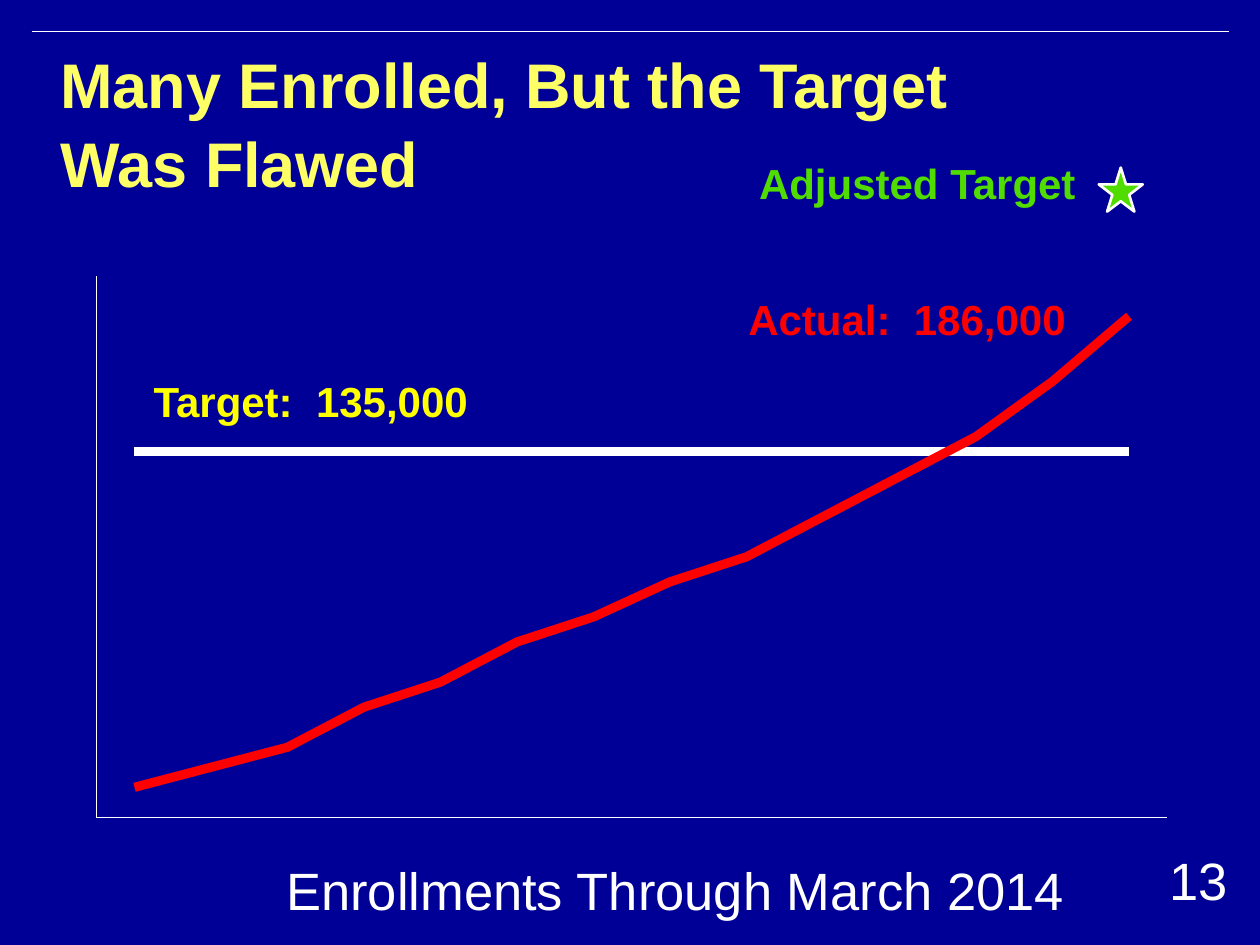
from lxml import etree
from pptx import Presentation
from pptx.chart.data import CategoryChartData
from pptx.dml.color import RGBColor
from pptx.enum.chart import XL_CHART_TYPE as ChartType, XL_MARKER_STYLE as Marker
from pptx.enum.chart import XL_TICK_LABEL_POSITION as LabelPosition, XL_TICK_MARK as TickMark
from pptx.enum.shapes import MSO_CONNECTOR as Connector, MSO_SHAPE as Shape
from pptx.enum.text import MSO_ANCHOR as Anchor, PP_ALIGN as Align
from pptx.oxml import parse_xml
from pptx.oxml.ns import nsdecls, qn
from pptx.util import Inches, Pt

COLORS = {
    "background": "000096",
    "title": "FEFF65",
    "white": "FFFFFF",
    "target": "FFFF00",
    "actual": "FF0000",
    "adjusted": "51DC00",
}
FONT = "Arial"
COLUMNS, ROWS = 100, 75
TARGET = [73] * 14
ACTUAL = [6, 10, 14, 22, 27, 35, 40, 47, 52, 60, 68, 76, 87, 100]
PLOT_AREA = {"x": 0.022, "y": 0.033, "w": 0.965, "h": 0.934}


def color(name):
    return RGBColor.from_string(COLORS[name])


class SlideBuilder:
    """Holds the style and the current slide; lengths are grid columns and rows."""

    def __init__(self, presentation):
        self.column = presentation.slide_width / COLUMNS
        self.row = presentation.slide_height / ROWS
        self.slide = presentation.slides.add_slide(presentation.slide_layouts[5])
        fill = self.slide.background.fill
        fill.solid()
        fill.fore_color.rgb = color("background")

    def box(self, left, top, width, height):
        return (round(left * self.column), round(top * self.row),
                round(width * self.column), round(height * self.row))

    def style_line(self, line, name, width):
        line.color.rgb = color(name)
        line.width = Pt(width)

    def add_run(self, paragraph, text, size, name, bold):
        run = paragraph.add_run()
        run.text = text
        font = run.font
        font.name, font.size, font.bold = FONT, Pt(size), bold
        font.color.rgb = color(name)
        return run

    def title(self, text, place):
        shape = self.slide.shapes.title
        shape.left, shape.top, shape.width, shape.height = self.box(*place)
        frame = shape.text_frame
        frame.vertical_anchor = Anchor.MIDDLE
        frame.margin_left = 0
        paragraph = frame.paragraphs[0]
        paragraph.alignment = Align.LEFT
        paragraph.line_spacing = 1.05
        run = self.add_run(paragraph, text, 36, "title", True)
        shadow = parse_xml(
            f'<a:effectLst {nsdecls("a")}><a:outerShdw dist="53882" dir="2700000">'
            '<a:srgbClr val="000000"><a:alpha val="60000"/></a:srgbClr>'
            '</a:outerShdw></a:effectLst>')
        run.font.fill._xPr.find(qn("a:solidFill")).addnext(shadow)

    def label(self, text, place, name, size=24, bold=True, align=Align.LEFT):
        frame = self.slide.shapes.add_textbox(*self.box(*place)).text_frame
        frame.word_wrap = True
        paragraph = frame.paragraphs[0]
        paragraph.alignment = align
        self.add_run(paragraph, text, size, name, bold)

    def rule(self, left, right, row):
        start, y, width, _ = self.box(left, row, right - left, 0)
        line = self.slide.shapes.add_connector(Connector.STRAIGHT, start, y, start + width, y)
        self.style_line(line.line, "white", 1)
        etree.SubElement(line._element.spPr, qn("a:effectLst"))

    def star(self, place, name):
        shape = self.slide.shapes.add_shape(Shape.STAR_5_POINT, *self.box(*place))
        shape.shadow.inherit = False
        shape.fill.solid()
        shape.fill.fore_color.rgb = color(name)
        self.style_line(shape.line, "white", 1.5)

    def line_chart(self, place, series_values, styles, maximum):
        data = CategoryChartData()
        data.categories = [str(number) for number in range(1, len(ACTUAL) + 1)]
        for name, values in series_values.items():
            data.add_series(name, values)
        chart = self.slide.shapes.add_chart(ChartType.LINE, *self.box(*place), data).chart
        chart.has_legend = chart.has_title = False
        chart.font.name, chart.font.size = FONT, Pt(18)
        chart.font.color.rgb = color("white")
        for axis in (chart.category_axis, chart.value_axis):
            axis.has_major_gridlines = False
            axis.tick_label_position = LabelPosition.NONE
            axis.major_tick_mark = axis.minor_tick_mark = TickMark.NONE
            self.style_line(axis.format.line, "white", 0.75)
        chart.value_axis.minimum_scale = 0
        chart.value_axis.maximum_scale = maximum
        plot = chart.plots[0]
        plot.vary_by_categories = False
        for series, (name, width) in zip(plot.series, styles):
            series.smooth = False
            series.marker.style = Marker.NONE
            self.style_line(series.format.line, name, width)
        self.place_plot_area(chart)

    def place_plot_area(self, chart):
        """Fix the inner plot area and leave the chart without a fill."""
        root = chart._chartSpace
        plot_area = root.find(".//" + qn("c:plotArea"))
        for layout in plot_area.findall(qn("c:layout")):
            plot_area.remove(layout)
        modes = '<c:xMode val="edge"/><c:yMode val="edge"/>'
        sizes = "".join(f'<c:{key} val="{value}"/>' for key, value in PLOT_AREA.items())
        plot_area.insert(0, parse_xml(
            f'<c:layout {nsdecls("c")}><c:manualLayout><c:layoutTarget val="inner"/>'
            f'{modes}{sizes}</c:manualLayout></c:layout>'))
        root.find(qn("c:chart")).addnext(parse_xml(
            f'<c:spPr {nsdecls("c", "a")}><a:noFill/><a:ln><a:noFill/></a:ln></c:spPr>'))


def main():
    presentation = Presentation()
    presentation.slide_width, presentation.slide_height = Inches(10), Inches(7.5)
    builder = SlideBuilder(presentation)
    builder.rule(2.5, 97.5, 2.5)
    builder.title("Many Enrolled, But the Target Was Flawed", (4.8, 4.6, 82.5, 10))
    builder.line_chart((5.7, 20.4, 88.1, 46), {"Series 1": TARGET, "Series 2": ACTUAL},
                       [("white", 5.5), ("actual", 5.25)], maximum=108)
    builder.label("Enrollments Through March 2014", (20, 67.6, 67.2, 6.1), "white",
                  size=30, bold=False, align=Align.CENTER)
    builder.label("Target:  135,000", (11.2, 29.3, 37.2, 5), "target")
    builder.label("Actual:  186,000", (58.4, 22.8, 28.8, 5), "actual")
    builder.star((87.2, 13.3, 3.5, 3.5), "adjusted")
    builder.label("Adjusted Target", (56.2, 12, 33.2, 5), "adjusted", align=Align.CENTER)
    builder.label("13", (90.7, 66.8, 8.9, 6.1), "white",
                  size=30, bold=False, align=Align.CENTER)
    presentation.save("out.pptx")


if __name__ == "__main__":
    main()
